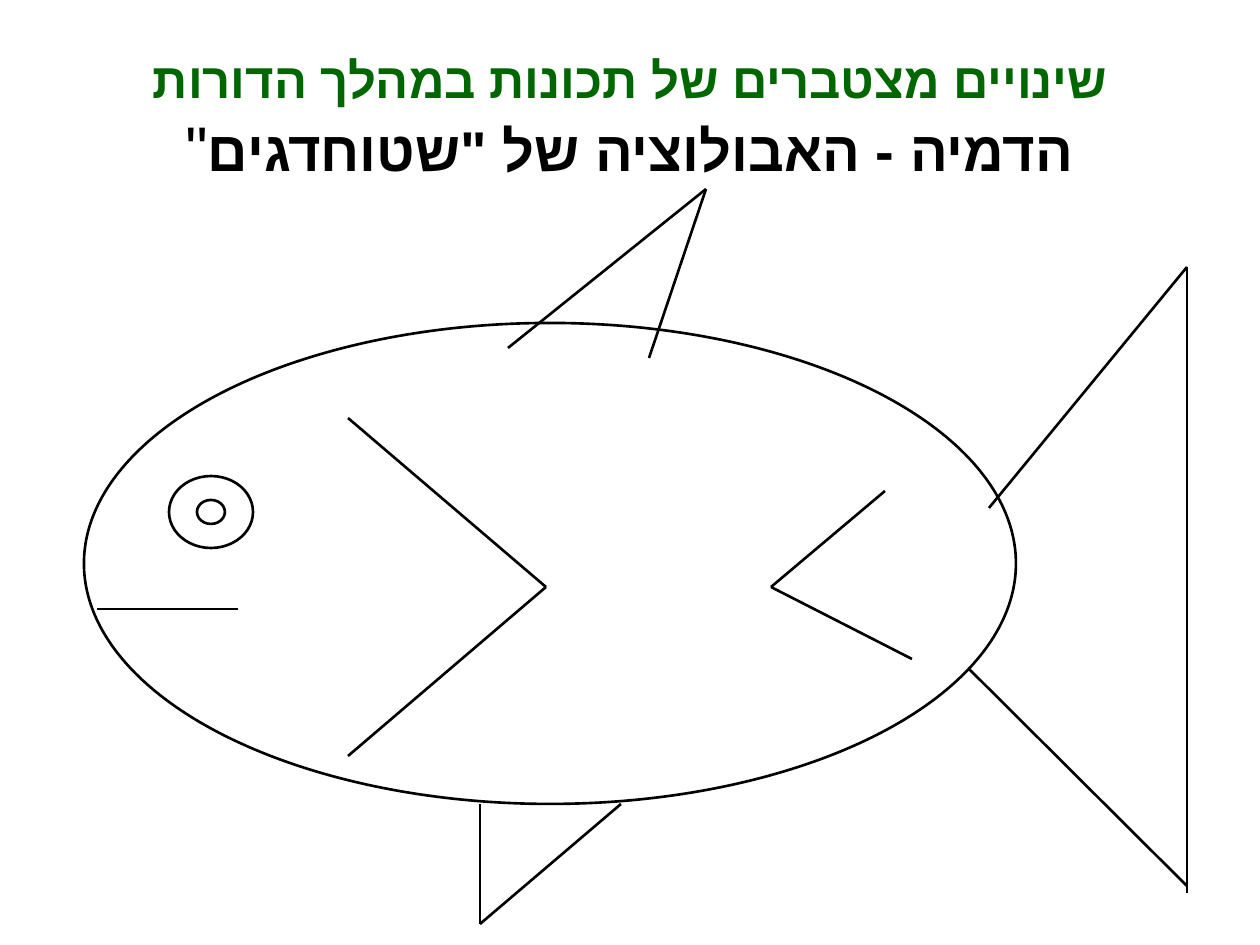
from dataclasses import dataclass

from lxml import etree
from pptx import Presentation
from pptx.dml.color import RGBColor
from pptx.enum.shapes import MSO_CONNECTOR, MSO_SHAPE
from pptx.enum.text import MSO_ANCHOR, MSO_AUTO_SIZE, PP_ALIGN
from pptx.oxml.ns import qn
from pptx.util import Inches, Pt

STRAIGHT = MSO_CONNECTOR.STRAIGHT
ELLIPSE = MSO_SHAPE.OVAL
MIDDLE = MSO_ANCHOR.MIDDLE
NO_AUTOFIT = MSO_AUTO_SIZE.NONE
CENTER = PP_ALIGN.CENTER
TITLE_ONLY = 5
PX_PER_INCH = 126


@dataclass(frozen=True)
class Theme:
    font: str = "Arial"
    heading: RGBColor = RGBColor(0x00, 0x66, 0x00)
    ink: RGBColor = RGBColor(0x00, 0x00, 0x00)
    paper: RGBColor = RGBColor(0xFF, 0xFF, 0xFF)
    heading_size: int = 28
    subject_size: int = 32
    quote_size: int = 36
    outline: float = 1.5
    thin: float = 0.75


def px(length):
    return Inches(length / PX_PER_INCH)


class FishSlide:
    def __init__(self, presentation, theme):
        self.theme = theme
        self.slide = presentation.slides.add_slide(
            presentation.slide_layouts[TITLE_ONLY])
        self.fish = None

    def title(self, left, top, width, height, lines):
        """Fill the title; each line is a list of (text, format) pairs."""
        title = self.slide.shapes.title
        place = dict(left=left, top=top, width=width, height=height)
        for name, value in place.items():
            setattr(title, name, px(value))
        frame = title.text_frame
        settings = dict(word_wrap=True, auto_size=NO_AUTOFIT, vertical_anchor=MIDDLE)
        for name, value in settings.items():
            setattr(frame, name, value)
        paragraph = frame.paragraphs[0]
        paragraph.alignment = CENTER
        paragraph._p.get_or_add_pPr().set("rtl", "1")
        for number, line in enumerate(lines):
            if number:
                paragraph.add_line_break()
            for text, style in line:
                self.run(paragraph, text, **style)

    def run(self, paragraph, text, size, color, bold=True):
        run = paragraph.add_run()
        run.text = text
        style = dict(name=self.theme.font, size=Pt(size), bold=bold)
        for name, value in style.items():
            setattr(run.font, name, value)
        run.font.color.rgb = color
        hebrew_font = etree.SubElement(run._r.get_or_add_rPr(), qn("a:cs"))
        hebrew_font.set("typeface", self.theme.font)

    def start_fish(self):
        self.fish = self.slide.shapes.add_group_shape().shapes

    def ellipse(self, left, top, width, height):
        oval = self.fish.add_shape(
            ELLIPSE, px(left), px(top), px(width), px(height))
        oval.shadow.inherit = False
        oval.fill.solid()
        oval.fill.fore_color.rgb = self.theme.paper
        self.stroke(oval.line, self.theme.outline)

    def strokes(self, *points, weight=None):
        """Join successive points with straight lines."""
        for start, end in zip(points, points[1:]):
            line = self.fish.add_connector(STRAIGHT, *map(px, start + end))
            etree.SubElement(line._element.spPr, qn("a:effectLst"))
            self.stroke(line.line, weight or self.theme.outline)

    def stroke(self, line, weight):
        line.color.rgb = self.theme.ink
        line.width = Pt(weight)


def main():
    presentation = Presentation()
    presentation.slide_width = Inches(10)
    presentation.slide_height = Inches(7.5)
    theme = Theme()
    page = FishSlide(presentation, theme)

    heading = dict(size=theme.heading_size, color=theme.heading)
    subject = dict(size=theme.subject_size, color=theme.ink)
    quote = dict(size=theme.quote_size, color=theme.ink, bold=False)
    page.title(63, 38, 1134, 158, [
        [("שינויים מצטברים של תכונות במהלך הדורות", heading)],
        [('הדמיה - האבולוציה של "שטוחדגים', subject), ('"', quote)],
    ])

    page.start_fish()
    tail_top = (1187, 267)
    # The body covers the inner end of the lower tail edge
    page.strokes((960, 660), (1187, 886))
    page.strokes(tail_top, (1187, 893))
    page.ellipse(84, 323, 932, 481)
    gill = [(348, 418), (546, 587), (348, 756)]
    page.strokes(*gill)
    eye, pupil = (169, 476, 84, 72), (197, 500, 28, 24)
    page.ellipse(*eye)
    page.ellipse(*pupil)
    dorsal_fin = [(508, 348), (706, 189), (649, 358)]
    page.strokes(*dorsal_fin)
    page.strokes((989, 508), tail_top)
    belly_fin = [(480, 804), (480, 924), (621, 804)]
    page.strokes(*belly_fin)
    side_fin = [(885, 491), (771, 587), (912, 659)]
    page.strokes(*side_fin)
    mouth = [(97, 609), (238, 609)]
    page.strokes(*mouth, weight=theme.thin)

    presentation.save("out.pptx")


if __name__ == "__main__":
    main()
